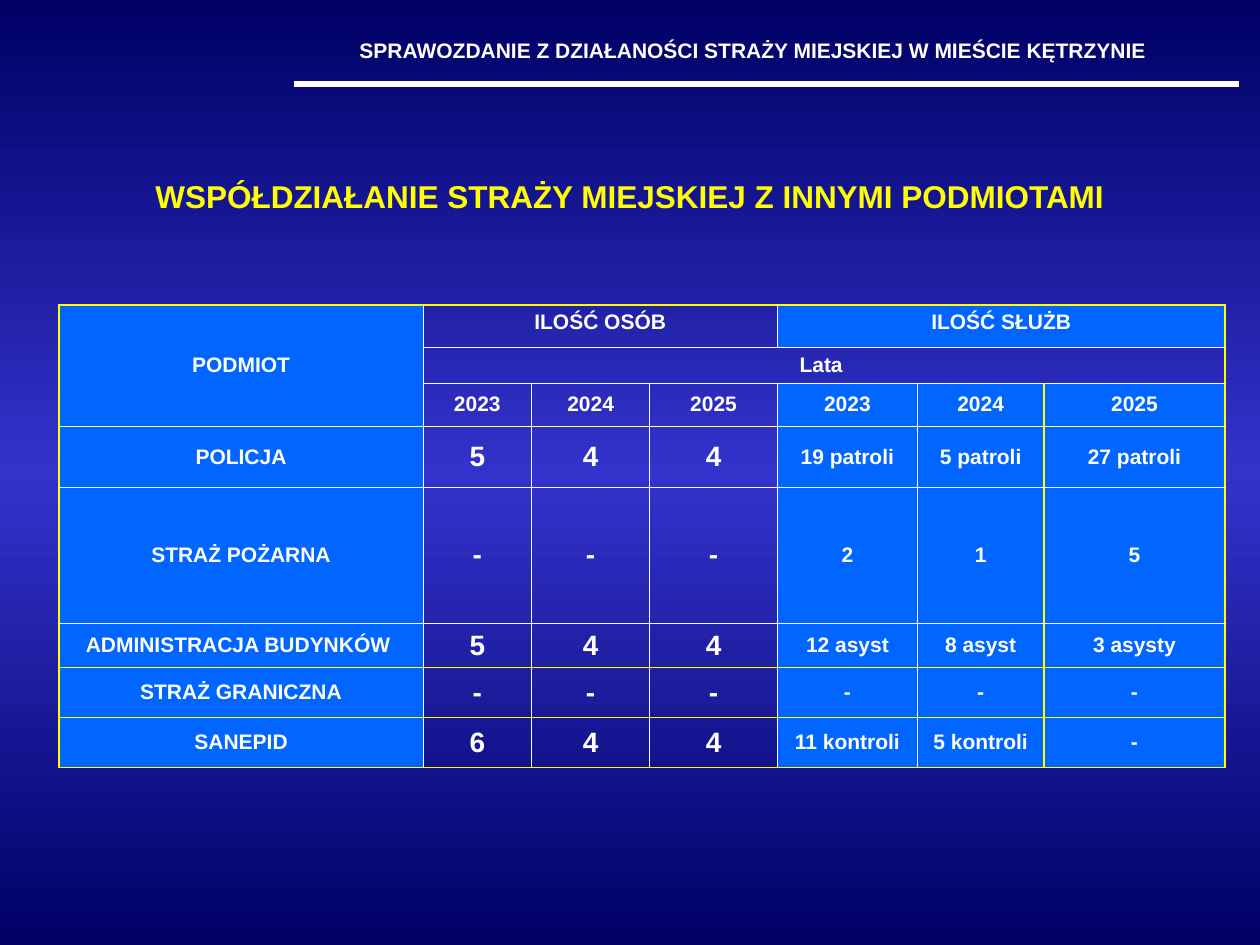
"""Build the slide on the municipal guard's cooperation with other bodies."""
from copy import deepcopy

from lxml import etree
from pptx import Presentation
from pptx.dml.color import RGBColor
from pptx.enum.shapes import MSO_CONNECTOR
from pptx.enum.text import MSO_ANCHOR, MSO_AUTO_SIZE, PP_ALIGN
from pptx.oxml.ns import qn
from pptx.util import Pt

STRAIGHT = MSO_CONNECTOR.STRAIGHT
TOP, MIDDLE = MSO_ANCHOR.TOP, MSO_ANCHOR.MIDDLE
CENTER = PP_ALIGN.CENTER
NO_AUTOSIZE = MSO_AUTO_SIZE.NONE

NAVY = RGBColor(0x00, 0x00, 0x66)
INDIGO = RGBColor(0x33, 0x33, 0xCC)
BLUE = RGBColor(0x00, 0x66, 0xFF)
YELLOW = RGBColor(0xFF, 0xFF, 0x00)
WHITE = RGBColor(0xFF, 0xFF, 0xFF)

HEADER = "SPRAWOZDANIE Z DZIAŁANOŚCI STRAŻY MIEJSKIEJ W MIEŚCIE KĘTRZYNIE "
TITLE = "WSPÓŁDZIAŁANIE STRAŻY MIEJSKIEJ Z INNYMI PODMIOTAMI"
ROWS = [
    ["PODMIOT", "ILOŚĆ OSÓB", "", "", "ILOŚĆ SŁUŻB", "", ""],
    ["", "Lata ", "", "", "", "", ""],
    ["", "2023", "2024", "2025", "2023", "2024", "2025"],
    ["POLICJA", "5", "4", "4", "19 patroli", "5 patroli", "27 patroli"],
    ["STRAŻ POŻARNA", "-", "-", "-", "2", "1", "5"],
    ["ADMINISTRACJA BUDYNKÓW ", "5", "4", "4", "12 asyst", "8 asyst", "3 asysty"],
    ["STRAŻ GRANICZNA", "-", "-", "-", "-", "-", "-"],
    ["SANEPID", "6", "4", "4", "11 kontroli", "5 kontroli", "-"],
]
MERGES = [((0, 0), (2, 0)), ((0, 1), (0, 3)), ((0, 4), (0, 6)), ((1, 1), (1, 6))]
COL_WIDTHS = [208, 62, 67.5, 73, 80, 72.3, 103.5]
ROW_HEIGHTS = [24.3, 20.5, 24.5, 35, 77.7, 25.3, 28.6, 28.6]
HEADER_ROWS = 3
PEOPLE_COLS = range(1, 4)
YELLOW_ROW_EDGES = {0, 6, 7, 8}
YELLOW_COL_EDGES = {0, 6, 7}


def write(tf, text, size=12, color=WHITE, anchor=MIDDLE):
    tf.word_wrap = True
    tf.vertical_anchor = anchor
    p = tf.paragraphs[0]
    p.alignment = CENTER
    r = p.add_run()
    r.text = text
    r.font.name = "Arial"
    r.font.size = Pt(size)
    r.font.bold = True
    r.font.color.rgb = color


def set_borders(cell, row, col):
    bottom = row + (cell.span_height if cell.is_merge_origin else 1)
    right = col + (cell.span_width if cell.is_merge_origin else 1)
    edges = {
        "a:lnL": col in YELLOW_COL_EDGES,
        "a:lnR": right in YELLOW_COL_EDGES,
        "a:lnT": row in YELLOW_ROW_EDGES,
        "a:lnB": bottom in YELLOW_ROW_EDGES,
    }
    tc_pr = cell._tc.get_or_add_tcPr()
    for i, (tag, strong) in enumerate(edges.items()):
        ln = etree.Element(qn(tag), w=str(Pt(1 if strong else 0.5)))
        fill = etree.SubElement(ln, qn("a:solidFill"))
        etree.SubElement(fill, qn("a:srgbClr"), val=str(YELLOW if strong else WHITE))
        tc_pr.insert(i, ln)


def set_background(s):
    fill = s.background.fill
    fill.gradient()
    fill.gradient_angle = 270
    stops = s.element.find(".//" + qn("a:gsLst"))
    stops.insert(1, deepcopy(stops[0]))
    for stop, position, color in zip(fill.gradient_stops, (0, 0.5, 1), (NAVY, INDIGO, NAVY)):
        stop.position = position
        stop.color.rgb = color


def add_rule(s):
    line = s.shapes.add_connector(STRAIGHT, Pt(168), Pt(48), Pt(708), Pt(48))
    line.line.color.rgb = WHITE
    line.line.width = Pt(3)
    etree.SubElement(line._element.spPr, qn("a:effectLst"))


def add_cooperation_table(s):
    frame = s.shapes.add_table(len(ROWS), len(COL_WIDTHS), Pt(33.8), Pt(174.2),
                               Pt(sum(COL_WIDTHS)), Pt(sum(ROW_HEIGHTS)))
    table = frame.table
    table.first_row = table.horz_banding = False
    for column, width in zip(table.columns, COL_WIDTHS):
        column.width = Pt(width)
    for row, height in zip(table.rows, ROW_HEIGHTS):
        row.height = Pt(height)
    for first, last in MERGES:
        table.cell(*first).merge(table.cell(*last))
    for i, texts in enumerate(ROWS):
        for j, text in enumerate(texts):
            cell = table.cell(i, j)
            people = j in PEOPLE_COLS
            if people or i == 1 and j > 0:
                cell.fill.background()
            else:
                cell.fill.solid()
                cell.fill.fore_color.rgb = BLUE
            set_borders(cell, i, j)
            if cell.is_spanned:
                continue
            cell.margin_left = cell.margin_right = Pt(3)
            cell.margin_top = cell.margin_bottom = Pt(3)
            anchor = TOP if i == 0 and j > 0 else MIDDLE
            cell.vertical_anchor = anchor
            size = 16 if people and i >= HEADER_ROWS else 12
            write(cell.text_frame, text, size=size, anchor=anchor)


def main():
    prs = Presentation()
    prs.slide_width, prs.slide_height = Pt(720), Pt(540)
    s = prs.slides.add_slide(prs.slide_layouts[5])
    set_background(s)
    add_rule(s)
    add_cooperation_table(s)

    title = s.shapes.title
    title.left, title.top, title.width, title.height = Pt(0), Pt(97.5), Pt(720), Pt(29)
    title.text_frame.auto_size = NO_AUTOSIZE
    write(title.text_frame, TITLE, size=18, color=YELLOW)

    header = s.shapes.add_textbox(Pt(156), Pt(18), Pt(552), Pt(21.8))
    write(header.text_frame, HEADER, anchor=TOP)
    prs.save("out.pptx")


if __name__ == "__main__":
    main()
